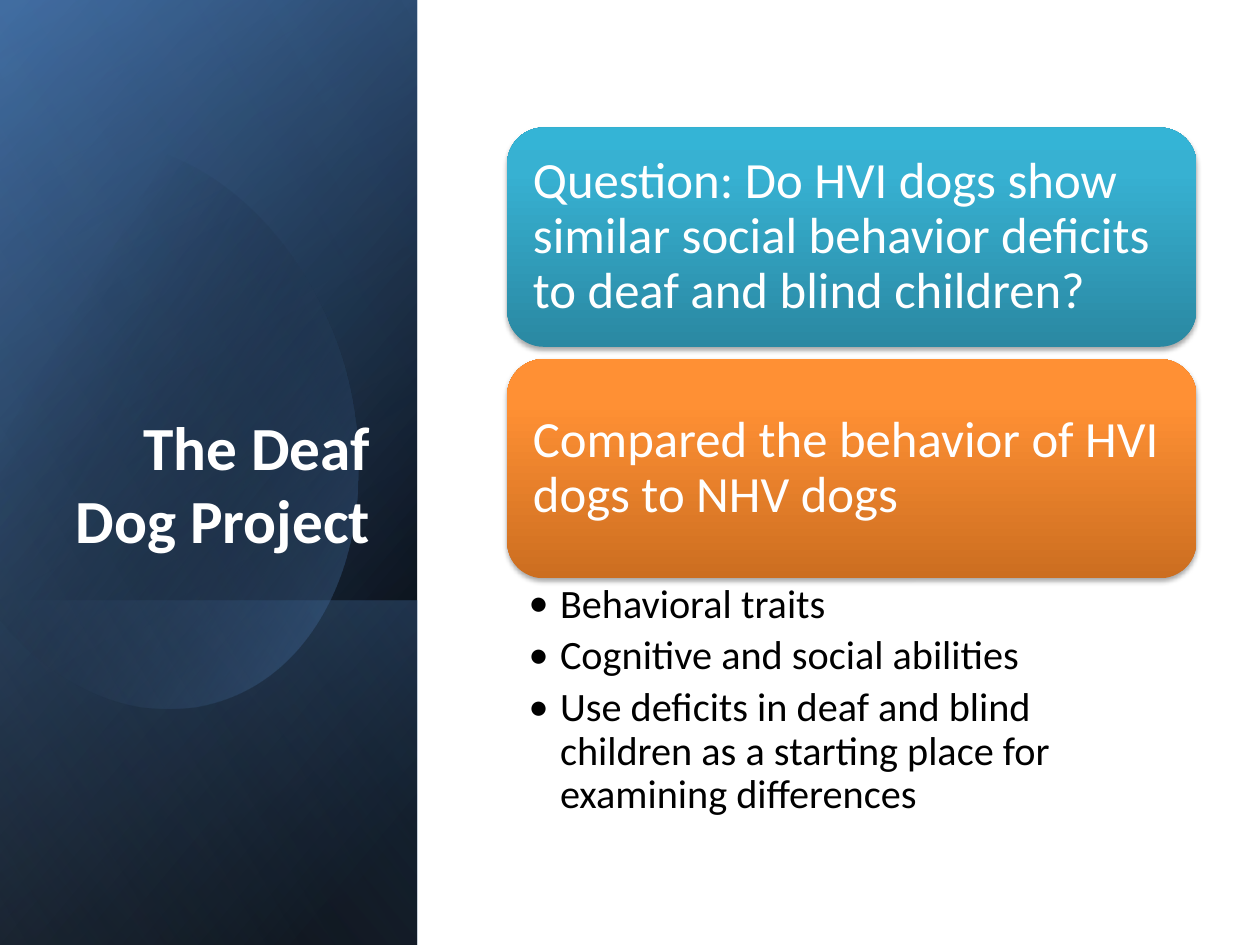
from dataclasses import dataclass
from typing import NamedTuple

from lxml import etree
from pptx import Presentation
from pptx.dml.color import RGBColor
from pptx.enum.shapes import MSO_SHAPE
from pptx.enum.text import MSO_ANCHOR, MSO_AUTO_SIZE, PP_ALIGN
from pptx.oxml import parse_xml
from pptx.oxml.ns import nsdecls, qn
from pptx.util import Inches, Pt

RECT, ROUND = MSO_SHAPE.RECTANGLE, MSO_SHAPE.ROUNDED_RECTANGLE
TOP, MIDDLE, BOTTOM = MSO_ANCHOR.TOP, MSO_ANCHOR.MIDDLE, MSO_ANCHOR.BOTTOM
LEFT, RIGHT = PP_ALIGN.LEFT, PP_ALIGN.RIGHT
NO_FIT = MSO_AUTO_SIZE.NONE
WIDTH, HEIGHT = Inches(10), Inches(7.5)
COL, ROW = WIDTH / 100, HEIGHT / 100
FONT = "Calibri"
TITLE_LAYOUT = 5


class Box(NamedTuple):
    col: float
    row: float
    cols: float
    rows: float

    def emu(self) -> tuple:
        return (int(self.col * COL), int(self.row * ROW),
                int(self.cols * COL), int(self.rows * ROW))


class Stop(NamedTuple):
    pos: int
    color: str
    alpha: int = 100


@dataclass
class Layer:
    box: Box
    angle: int
    stops: list


@dataclass
class Card:
    text: str
    stops: list


PANEL = Box(0, 0, 33.1, 100)
BACK_LAYERS = [
    Layer(PANEL, 50, [Stop(8, "000000"), Stop(100, "376092")]),
    Layer(PANEL, 30, [Stop(0, "000000", 0), Stop(99, "4F81BD", 46)]),
    Layer(Box(0, 63.5, 33.1, 36.5), 130,
          [Stop(2, "4F81BD", 29), Stop(100, "000000", 30)]),
]
FRONT_LAYER = Layer(PANEL, 120, [Stop(0, "000000", 0), Stop(99, "95B3D7", 11)])
EGG_ANGLE = 30
EGG_STOPS = [Stop(29, "000000", 0), Stop(100, "4F81BD", 43)]
EGG_UNITS = 1000
EGG_START = (0.96, 1.14)
EGG_SEGMENTS = [
    [(1.71, 1.22), (2.44, 1.92), (2.73, 2.9)],
    [(3.07, 4.12), (2.62, 5.31), (1.71, 5.57)],
    [(1.14, 5.74), (0.53, 5.5), (0.07, 5)],
    [(-0.03, 4.88)],
    [(-0.25, 1.66)],
    [(-0.15, 1.54)],
    [(0.02, 1.37), (0.22, 1.25), (0.45, 1.18)],
    [(0.62, 1.13), (0.79, 1.12), (0.96, 1.14)],
]
FIRST_CARD = Box(40.25, 13.5, 54.7, 23.2)
CARD_PITCH = 24.5
CARDS = [
    Card("Question: Do HVI dogs show similar social behavior deficits "
         "to deaf and blind children?",
         [Stop(0, "2A88A2"), Stop(80, "37B1D2"), Stop(100, "34B4D6")]),
    Card("Compared the behavior of HVI dogs to NHV dogs",
         [Stop(0, "CC6E20"), Stop(80, "FF9034"), Stop(100, "FF9136")]),
]
BULLETS = [
    "Behavioral traits",
    "Cognitive and social abilities",
    "Use deficits in deaf and blind children as a starting place "
    "for examining differences",
]


def rgb(color: str) -> RGBColor:
    return RGBColor.from_string(color)


def fill_gradient(sp, stops: list, angle: int) -> None:
    sp.shadow.inherit = False
    sp.line.fill.background()
    sp.fill.background()
    marks = "".join(
        f'<a:gs pos="{s.pos * 1000}"><a:srgbClr val="{s.color}">'
        f'<a:alpha val="{s.alpha * 1000}"/></a:srgbClr></a:gs>' for s in stops)
    grad = parse_xml(
        f'<a:gradFill {nsdecls("a")} rotWithShape="1"><a:gsLst>{marks}</a:gsLst>'
        f'<a:lin ang="{angle * 60000}" scaled="0"/></a:gradFill>')
    props = sp._element.spPr
    props.replace(props.find(qn("a:noFill")), grad)


def add_layer(s, layer: Layer) -> None:
    x, y, w, h = layer.box.emu()
    sp = s.shapes.add_shape(RECT, x + (w - h) // 2, y + (h - w) // 2, h, w)
    sp.rotation = 90
    sp._element.spPr.find(qn("a:xfrm")).set("flipH", "1")
    fill_gradient(sp, layer.stops, layer.angle)


def add_egg(s) -> None:
    ends = [EGG_START] + [segment[-1] for segment in EGG_SEGMENTS]
    left, top = (min(axis) for axis in zip(*ends))
    scaled = [(round(x * EGG_UNITS), round(y * EGG_UNITS)) for x, y in ends]
    builder = s.shapes.build_freeform(*scaled[0], scale=Inches(1) / EGG_UNITS)
    builder.add_line_segments(scaled[1:], close=True)
    sp = builder.convert_to_shape()
    lines = list(sp._element.iter(qn("a:lnTo")))
    for line, segment in zip(lines, EGG_SEGMENTS):
        if len(segment) == 3:
            points = "".join(
                f'<a:pt x="{round((x - left) * EGG_UNITS)}" '
                f'y="{round((y - top) * EGG_UNITS)}"/>' for x, y in segment)
            line.getparent().replace(line, parse_xml(
                f'<a:cubicBezTo {nsdecls("a")}>{points}</a:cubicBezTo>'))
    fill_gradient(sp, EGG_STOPS, EGG_ANGLE)


def write(tf, *lines: str, size: float, color: str, bold: bool = False,
          align=LEFT, anchor=TOP, insets: tuple = (0.1, 0.05, 0.1, 0.05),
          spacing: float = 0.9, after: float = 0, bullet: str = "") -> None:
    tf.word_wrap = True
    tf.auto_size = NO_FIT
    tf.vertical_anchor = anchor
    (tf.margin_left, tf.margin_top,
     tf.margin_right, tf.margin_bottom) = map(Inches, insets)
    for i, line in enumerate(lines):
        p = tf.add_paragraph() if i else tf.paragraphs[0]
        p.alignment, p.line_spacing, p.space_after = align, spacing, Pt(after)
        r = p.add_run()
        r.text = line
        r.font.name, r.font.size, r.font.bold = FONT, Pt(size), bold
        r.font.color.rgb = rgb(color)
        if bullet:
            props = p._p.get_or_add_pPr()
            props.set("marL", str(Inches(0.25)))
            props.set("indent", str(Inches(-0.25)))
            etree.SubElement(props, qn("a:buFont")).set("typeface", FONT)
            etree.SubElement(props, qn("a:buChar")).set("char", bullet)


def add_card(s, card: Card, box: Box) -> None:
    sp = s.shapes.add_shape(ROUND, *box.emu())
    fill_gradient(sp, card.stops, 270)
    effects = sp._element.spPr.find(qn("a:effectLst"))
    effects.append(parse_xml(
        f'<a:outerShdw {nsdecls("a")} blurRad="{Pt(3.1)}" dist="{Pt(1.8)}" '
        'dir="5400000" rotWithShape="0"><a:srgbClr val="000000">'
        '<a:alpha val="35000"/></a:srgbClr></a:outerShdw>'))
    write(sp.text_frame, card.text, size=29, color="FFFFFF", anchor=MIDDLE,
          insets=(0.12,) * 4)


def main() -> None:
    prs = Presentation()
    prs.slide_width, prs.slide_height = WIDTH, HEIGHT
    s = prs.slides.add_slide(prs.slide_layouts[TITLE_LAYOUT])

    for layer in BACK_LAYERS:
        add_layer(s, layer)
    add_egg(s)
    add_layer(s, FRONT_LAYER)

    title = s.shapes.title
    title.left, title.top, title.width, title.height = Box(4.8, 24.5, 25.6, 35).emu()
    write(title.text_frame, "The Deaf Dog Project", size=35, color="FFFFFF",
          bold=True, align=RIGHT, anchor=BOTTOM, spacing=1)
    s.shapes._spTree.append(title._element)

    for i, card in enumerate(CARDS):
        add_card(s, card, FIRST_CARD._replace(row=FIRST_CARD.row + i * CARD_PITCH))

    details = s.shapes.add_textbox(*Box(40.25, 61.2, 54.7, 26.7).emu())
    write(details.text_frame, *BULLETS, size=23, color="000000", after=4.8,
          insets=(0.17, 0.04, 0.23, 0.04), bullet="•")
    prs.save("out.pptx")


if __name__ == "__main__":
    main()
